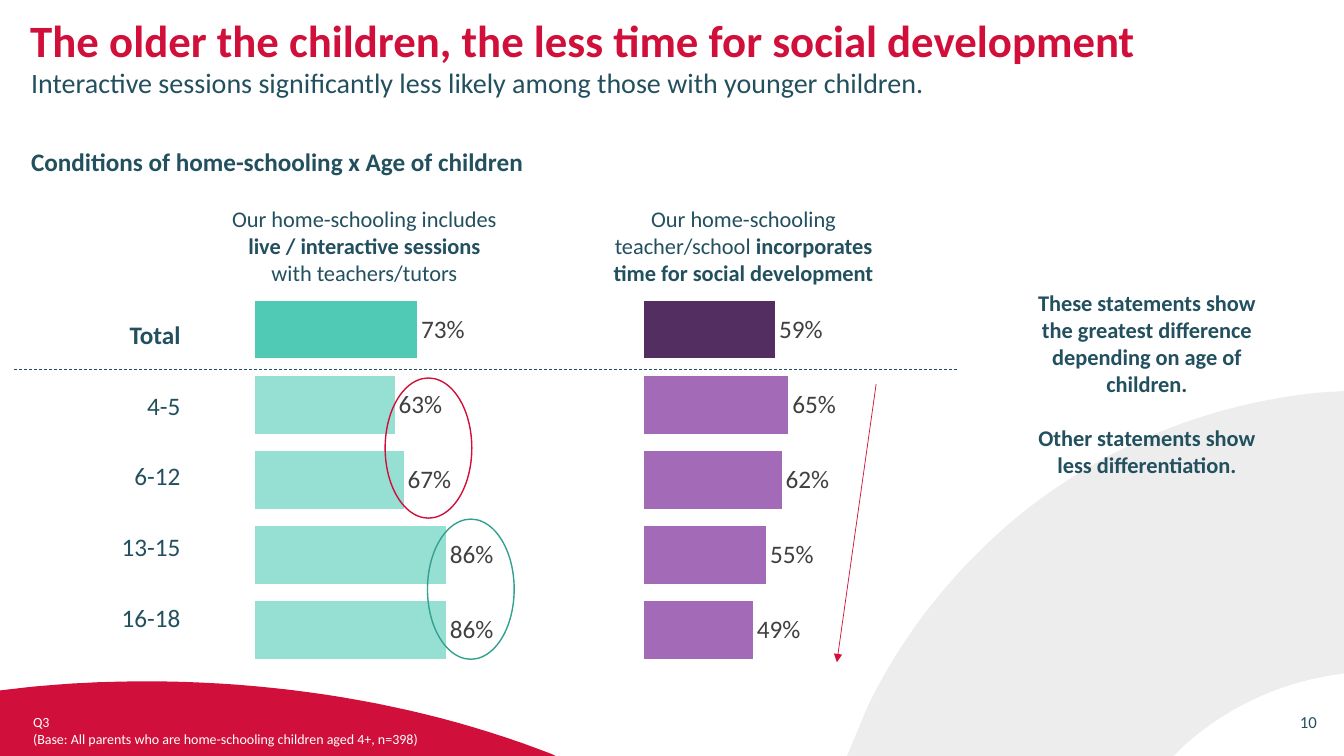
from lxml import etree
from pptx import Presentation
from pptx.chart.data import CategoryChartData
from pptx.dml.color import RGBColor
from pptx.enum.chart import XL_CHART_TYPE, XL_LABEL_POSITION
from pptx.enum.dml import MSO_LINE
from pptx.enum.shapes import MSO_CONNECTOR, MSO_SHAPE
from pptx.enum.text import MSO_ANCHOR, PP_ALIGN
from pptx.oxml import parse_xml
from pptx.oxml.ns import nsdecls, qn
from pptx.util import Inches, Pt

LEFT, CENTER, RIGHT = PP_ALIGN.LEFT, PP_ALIGN.CENTER, PP_ALIGN.RIGHT
TOP, MIDDLE, BOTTOM = MSO_ANCHOR.TOP, MSO_ANCHOR.MIDDLE, MSO_ANCHOR.BOTTOM
FONT = "Calibri"
RED, NAVY, WHITE, GREEN = "D0103A", "22505F", "FFFFFF", "32A18F"
BREAK = "\v"
color = RGBColor.from_string


def write(paragraph, pieces, size, hex_color=NAVY, alignment=LEFT, spacing=1.0):
    """Fill a paragraph with (text, bold) pieces."""
    paragraph.alignment = alignment
    paragraph.line_spacing = spacing
    for text, bold in pieces:
        if text == BREAK:
            paragraph.add_line_break()
            continue
        run = paragraph.add_run()
        run.text = text
        run.font.name, run.font.size, run.font.bold = FONT, Pt(size), bold
        run.font.color.rgb = color(hex_color)


def place_text(shape, box, paragraphs, size, hex_color=NAVY, alignment=LEFT,
               anchor=TOP, spacing=1.0, gap=0):
    """Position a text shape and write its paragraphs."""
    shape.left, shape.top, shape.width, shape.height = [Inches(v) for v in box]
    frame = shape.text_frame
    frame.word_wrap = True
    frame.vertical_anchor = anchor
    for index, pieces in enumerate(paragraphs):
        paragraph = frame.add_paragraph() if index else frame.paragraphs[0]
        write(paragraph, pieces, size, hex_color, alignment, spacing)
        paragraph.space_before = Pt(gap if index else 0)


presentation = Presentation()
presentation.slide_width, presentation.slide_height = Inches(13.33), Inches(7.5)
slide = presentation.slides.add_slide(presentation.slide_layouts[5])
shapes = slide.shapes

# Background curves: two numbers are a line, six a Bezier curve
red_hill = [(1.44, 6.76), (1.04, 6.76, 0.64, 6.78, 0.26, 6.82), (0, 6.85), (0, 7.5),
            (5.51, 7.5), (5.47, 7.48), (4.29, 7.02, 2.91, 6.76, 1.44, 6.76)]
grey_arc = [(13.33, 3.88), (13.33, 6.68), (13.27, 6.69),
            (12.69, 6.77, 12.16, 7.02, 11.73, 7.41), (11.64, 7.5), (8.4, 7.5),
            (8.61, 7), (8.93, 6.34, 9.39, 5.74, 9.97, 5.23), (9.99, 5.21),
            (10.88, 4.45, 11.98, 3.99, 13.14, 3.89)]
STEPS = 24
for outline, fill_color, opacity in [(red_hill, RED, 100), (grey_arc, "000000", 7)]:
    points = [outline[0]]
    for segment in outline[1:]:
        if len(segment) == 2:
            points.append(segment)
            continue
        x0, y0 = points[-1]
        x1, y1, x2, y2, x3, y3 = segment
        for step in range(1, STEPS + 1):
            t = step / STEPS
            a, b, c, d = (1 - t) ** 3, 3 * t * (1 - t) ** 2, 3 * t * t * (1 - t), t ** 3
            points.append((a * x0 + b * x1 + c * x2 + d * x3,
                           a * y0 + b * y1 + c * y2 + d * y3))
    points = [(x * 1000, y * 1000) for x, y in points]
    builder = shapes.build_freeform(*points[0], scale=Inches(1) / 1000)
    builder.add_line_segments(points[1:], close=True)
    curve = builder.convert_to_shape()
    curve.shadow.inherit = False
    curve.line.fill.background()
    curve.fill.solid()
    curve.fill.fore_color.rgb = color(fill_color)
    if opacity < 100:
        tint = curve.fill._xPr.find(".//" + qn("a:srgbClr"))
        etree.SubElement(tint, qn("a:alpha")).set("val", str(opacity * 1000))

# Title, subtitle and heading
place_text(shapes.title, (0.2, 0.14, 12.33, 0.53),
           [[("The older the children, the less time for social development", True)]],
           32, RED, spacing=0.9)
for box, text, size, bold in [
    ((0.21, 0.64, 12.32, 0.5),
     "Interactive sessions significantly less likely among those with younger children.", 20, False),
    ((0.21, 1.44, 5.49, 0.5), "Conditions of home-schooling x Age of children", 18, True),
]:
    place_text(shapes.add_textbox(0, 0, 0, 0), box, [[(text, bold)]], size, spacing=0.9)

# Footnote and page number
place_text(shapes.add_textbox(0, 0, 0, 0), (0.23, 7.06, 5.37, 0.4),
           [[("Q3", False)],
            [("(Base: All parents who are home-schooling children aged 4+, n=398)", False)]],
           10, WHITE, anchor=BOTTOM)
place_text(shapes.add_textbox(0, 0, 0, 0), (12.53, 6.97, 0.63, 0.4),
           [[("10", False)]], 12, alignment=RIGHT, anchor=MIDDLE, spacing=0.9)

# Age group labels
age_groups = ["Total", "4-5", "6-12", "13-15", "16-18"]
table = shapes.add_table(len(age_groups), 1, Inches(0.76), Inches(2.98),
                         Inches(1.04), Inches(3.5)).table
table.first_row = table.horz_banding = False
for row, age_group in enumerate(age_groups):
    cell = table.cell(row, 0)
    cell.fill.background()
    cell.vertical_anchor = MIDDLE
    cell.margin_left = cell.margin_right = cell.margin_top = Inches(0.01)
    cell.margin_bottom = 0
    write(cell.text_frame.paragraphs[0], [(age_group, row == 0)], 18, alignment=RIGHT)

# Bar charts: first bar is the total, the rest are age groups
for left, values, total_color, age_color in [
    (2.47, (0.73, 0.63, 0.67, 0.86, 0.86), "50C9B5", "96DFD3"),
    (6.33, (0.59, 0.65, 0.62, 0.55, 0.49), "532E60", "A36AB7"),
]:
    data = CategoryChartData(number_format="0%")
    data.categories = ["1", "2", "3", "4", "5"]
    data.add_series("Series 1", values)
    chart = shapes.add_chart(XL_CHART_TYPE.BAR_CLUSTERED, Inches(left), Inches(2.82),
                             Inches(2.76), Inches(3.88), data).chart
    chart.has_legend = chart.has_title = False
    chart.font.name, chart.font.size = FONT, Pt(18)
    chart.font.color.rgb = color("000000")
    chart.category_axis.reverse_order = True
    chart.category_axis.visible = chart.value_axis.visible = False
    chart.value_axis.has_major_gridlines = False
    chart.value_axis.minimum_scale, chart.value_axis.maximum_scale = 0, 1.2
    plot = chart.plots[0]
    plot.gap_width = 30
    plot.vary_by_categories = False
    series = plot.series[0]
    series.format.fill.solid()
    series.format.fill.fore_color.rgb = color(total_color)
    for index in range(1, len(values)):
        fill = series.points[index].format.fill
        fill.solid()
        fill.fore_color.rgb = color(age_color)
    labels = series.data_labels
    labels.show_value = True
    labels.position = XL_LABEL_POSITION.OUTSIDE_END
    labels.number_format, labels.number_format_is_linked = "0%", False
    labels.font.name, labels.font.size = FONT, Pt(18)
    labels.font.color.rgb = color("404040")
    # Plot area fills the chart frame with a 2% margin
    plot_area = chart._chartSpace.chart.plotArea
    for layout in plot_area.findall(qn("c:layout")):
        plot_area.remove(layout)
    plot_area.insert(0, parse_xml(
        f'<c:layout {nsdecls("c")}><c:manualLayout><c:layoutTarget val="inner"/>'
        '<c:xMode val="edge"/><c:yMode val="edge"/><c:x val="0.02"/><c:y val="0.02"/>'
        '<c:w val="0.96"/><c:h val="0.96"/></c:manualLayout></c:layout>'))

# Divider under the total, and downward trend arrow
for ends, line_color, is_arrow in [((0.14, 3.66, 9.5, 3.66), NAVY, False),
                                   ((8.69, 3.81, 8.3, 6.57), RED, True)]:
    connector = shapes.add_connector(MSO_CONNECTOR.STRAIGHT, *[Inches(v) for v in ends])
    connector.line.color.rgb = color(line_color)
    connector.line.width = Pt(0.5)
    if is_arrow:
        line_xml = connector.line._get_or_add_ln()
        etree.SubElement(line_xml, qn("a:tailEnd")).set("type", "triangle")
    else:
        connector.line.dash_style = MSO_LINE.DASH
    etree.SubElement(connector._element.spPr, qn("a:effectLst"))

# Chart headings
for left, pieces in [
    (2.03, [("Our home-schooling includes", False), (BREAK, False),
            ("live / interactive sessions", True), (BREAK, False),
            ("with teachers/tutors", False)]),
    (5.79, [("Our home-schooling teacher/school ", False),
            ("incorporates time for social development", True)]),
]:
    place_text(shapes.add_textbox(0, 0, 0, 0), (left, 1.99, 3.17, 0.91),
               [pieces], 16, alignment=CENTER)

# Rings around the contrasting age groups
for left, top, ring_color in [(4.24, 5.15, GREEN), (3.82, 3.75, RED)]:
    ring = shapes.add_shape(MSO_SHAPE.OVAL, Inches(left), Inches(top),
                            Inches(0.86), Inches(1.39))
    ring.shadow.inherit = False
    ring.fill.background()
    ring.line.color.rgb = color(ring_color)
    ring.line.width = Pt(1)

# Side comment
place_text(shapes.add_textbox(0, 0, 0, 0), (10.17, 2.82, 2.41, 1.99),
           [[("These statements show the greatest difference depending on age of children.", True)],
            [("Other statements show less differentiation.", True)]],
           16, alignment=CENTER, gap=19.5)

presentation.save("out.pptx")
